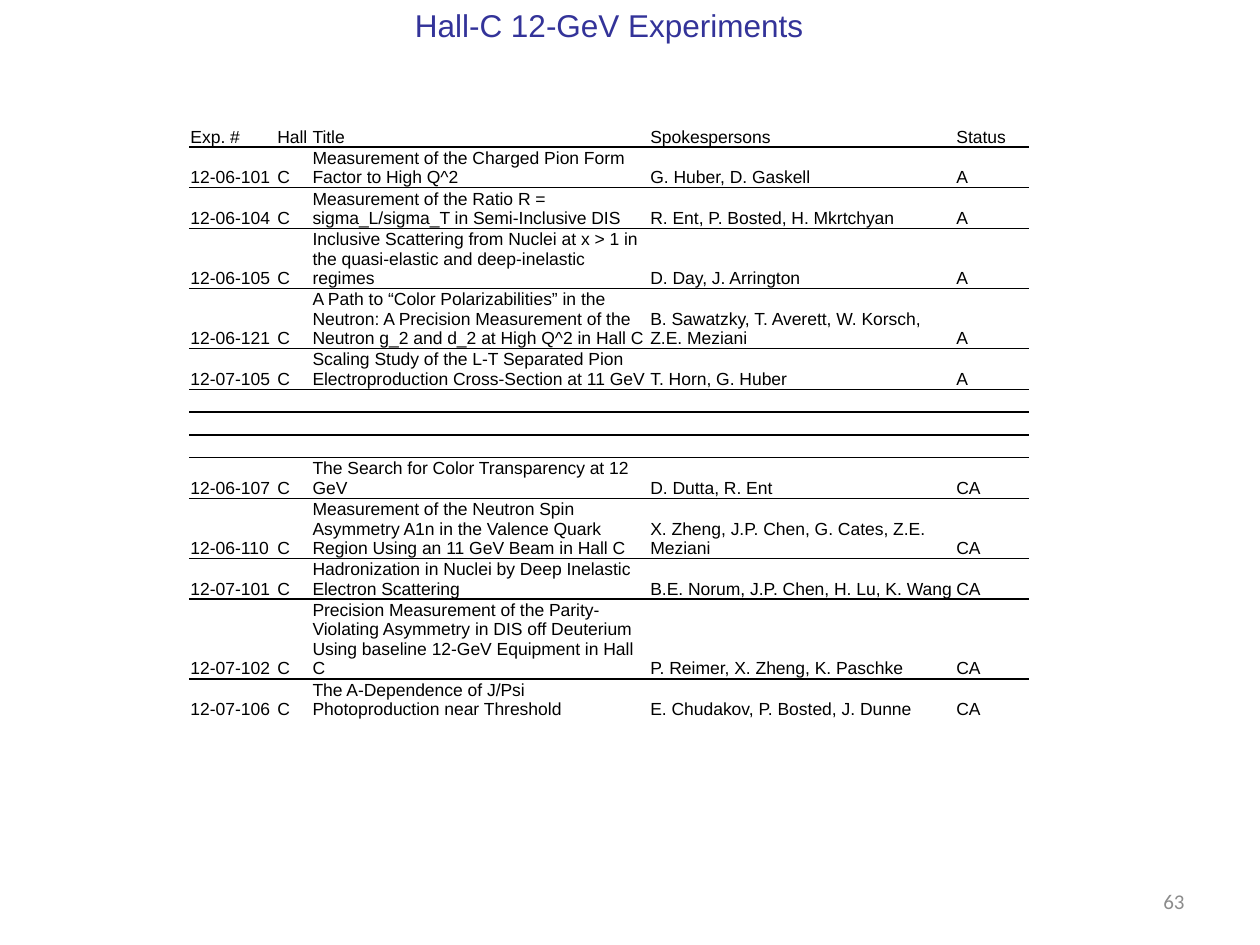
from typing import NamedTuple

from lxml import etree
from pptx import Presentation
from pptx.dml.color import RGBColor
from pptx.enum.text import MSO_ANCHOR, PP_ALIGN
from pptx.oxml.ns import qn
from pptx.util import Cm, Pt

BOTTOM, MIDDLE, TOP = MSO_ANCHOR.BOTTOM, MSO_ANCHOR.MIDDLE, MSO_ANCHOR.TOP
CENTER, LEFT, RIGHT = PP_ALIGN.CENTER, PP_ALIGN.LEFT, PP_ALIGN.RIGHT

COLORS = {"text": "000000", "rule": "000000", "title": "333399", "number": "8C8C8C"}
COLUMN_WIDTHS = (1.75, 0.71, 6.81, 6.17, 1.5)
LINE_HEIGHT, ROW_PADDING, CELL_INSET = 0.39, 0.03, 0.03
TABLE_SIZE = 10


class Experiment(NamedTuple):
    """A table row, with the number of text lines it needs."""

    number: str = ""
    hall: str = ""
    title: str = ""
    spokespersons: str = ""
    status: str = ""
    lines: int = 1


class Label(NamedTuple):
    """A line of text in its own box, with lengths in centimetres."""

    text: str
    left: float
    top: float
    width: float
    height: float
    size: int
    font: str
    color: str
    alignment: PP_ALIGN
    anchor: MSO_ANCHOR


ROWS = [
    Experiment("Exp. #", "Hall", "Title", "Spokespersons", "Status"),
    Experiment("12-06-101", "C", "Measurement of the Charged Pion Form Factor to High Q^2",
               "G. Huber, D. Gaskell", "A", 2),
    Experiment("12-06-104", "C",
               "Measurement of the Ratio R = sigma_L/sigma_T in Semi-Inclusive DIS",
               "R. Ent, P. Bosted, H. Mkrtchyan", "A", 2),
    Experiment("12-06-105", "C",
               "Inclusive Scattering from Nuclei at x > 1 in the quasi-elastic "
               "and deep-inelastic regimes",
               "D. Day, J. Arrington", "A", 3),
    Experiment("12-06-121", "C",
               "A Path to “Color Polarizabilities” in the Neutron: A Precision "
               "Measurement of the Neutron g_2 and d_2 at High Q^2 in Hall C",
               "B. Sawatzky, T. Averett, W. Korsch, Z.E. Meziani", "A", 3),
    Experiment("12-07-105", "C",
               "Scaling Study of the L-T Separated Pion Electroproduction "
               "Cross-Section at 11 GeV",
               "T. Horn, G. Huber", "A", 2),
    *[Experiment()] * 3,
    Experiment("12-06-107", "C", "The Search for Color Transparency at 12 GeV",
               "D. Dutta, R. Ent", "CA", 2),
    Experiment("12-06-110", "C",
               "Measurement of the Neutron Spin Asymmetry A1n in the Valence Quark "
               "Region Using an 11 GeV Beam in Hall C",
               "X. Zheng, J.P. Chen, G. Cates, Z.E. Meziani", "CA", 3),
    Experiment("12-07-101", "C",
               "Hadronization in Nuclei by Deep Inelastic Electron Scattering",
               "B.E. Norum, J.P. Chen, H. Lu, K. Wang", "CA", 2),
    Experiment("12-07-102", "C",
               "Precision Measurement of the Parity-Violating Asymmetry in DIS off "
               "Deuterium Using baseline 12-GeV Equipment in Hall C",
               "P. Reimer, X. Zheng, K. Paschke", "CA", 4),
    Experiment("12-07-106", "C", "The A-Dependence of J/Psi Photoproduction near Threshold",
               "E. Chudakov, P. Bosted, J. Dunne", "CA", 2),
]

LABELS = [
    Label("Hall-C 12-GeV Experiments", 2.54, 0, 19.48, 1.63, 18, "Arial", "title", CENTER, TOP),
    Label("63", 18.2, 17.65, 5.93, 1.02, 12, "Calibri", "number", RIGHT, MIDDLE),
]


def format_runs(paragraph, size: int, font: str, color: str) -> None:
    """Give every run of a paragraph the same size, font and colour."""
    for run in paragraph.runs:
        run.font.size = Pt(size)
        run.font.name = font
        run.font.color.rgb = RGBColor.from_string(COLORS[color])


def set_borders(cell, top: bool, bottom: bool) -> None:
    """Draw the horizontal borders asked for and hide the others."""
    properties = cell._tc.get_or_add_tcPr()
    borders = {"a:lnL": False, "a:lnR": False, "a:lnT": top, "a:lnB": bottom}
    for index, (tag, visible) in enumerate(borders.items()):
        line = etree.Element(qn(tag), w=str(Pt(1)))
        fill = etree.SubElement(line, qn("a:solidFill" if visible else "a:noFill"))
        if visible:
            etree.SubElement(fill, qn("a:srgbClr"), val=COLORS["rule"])
        properties.insert(index, line)


def fill_cell(cell, text: str) -> None:
    """Write one table cell, keeping empty cells at the table's text size."""
    cell.fill.background()
    cell.vertical_anchor = BOTTOM
    cell.margin_left = cell.margin_right = cell.margin_top = Cm(CELL_INSET)
    cell.margin_bottom = 0
    paragraph = cell.text_frame.paragraphs[0]
    paragraph.alignment = LEFT
    if text:
        paragraph.text = text
        format_runs(paragraph, TABLE_SIZE, "Arial", "text")
    else:
        etree.SubElement(paragraph._p, qn("a:endParaRPr"), sz=str(TABLE_SIZE * 100))


def add_experiment_table(slide, rows: list[Experiment]) -> None:
    """Add the ruled table of experiments."""
    heights = [Cm(row.lines * LINE_HEIGHT + ROW_PADDING) for row in rows]
    widths = [Cm(width) for width in COLUMN_WIDTHS]
    table = slide.shapes.add_table(
        len(rows), len(widths), Cm(3.81), Cm(2.54), sum(widths), sum(heights)
    ).table
    table.first_row = table.horz_banding = False
    for column, width in zip(table.columns, widths):
        column.width = width
    for index, (experiment, height) in enumerate(zip(rows, heights)):
        table.rows[index].height = height
        for cell, text in zip(table.rows[index].cells, experiment[:-1]):
            fill_cell(cell, text)
            set_borders(cell, top=index > 0, bottom=index < len(rows) - 1)


def add_label(slide, label: Label) -> None:
    """Add a text box holding one formatted line."""
    shape = slide.shapes.add_textbox(
        Cm(label.left), Cm(label.top), Cm(label.width), Cm(label.height)
    )
    text_frame = shape.text_frame
    text_frame.word_wrap = True
    text_frame.vertical_anchor = label.anchor
    text_frame.text = label.text
    paragraph = text_frame.paragraphs[0]
    paragraph.alignment = label.alignment
    format_runs(paragraph, label.size, label.font, label.color)


def main() -> None:
    """Build the slide and save it."""
    presentation = Presentation()
    presentation.slide_width, presentation.slide_height = Cm(25.4), Cm(19.05)
    slide = presentation.slides.add_slide(presentation.slide_layouts[6])
    add_experiment_table(slide, ROWS)
    for label in LABELS:
        add_label(slide, label)
    presentation.save("out.pptx")


if __name__ == "__main__":
    main()
